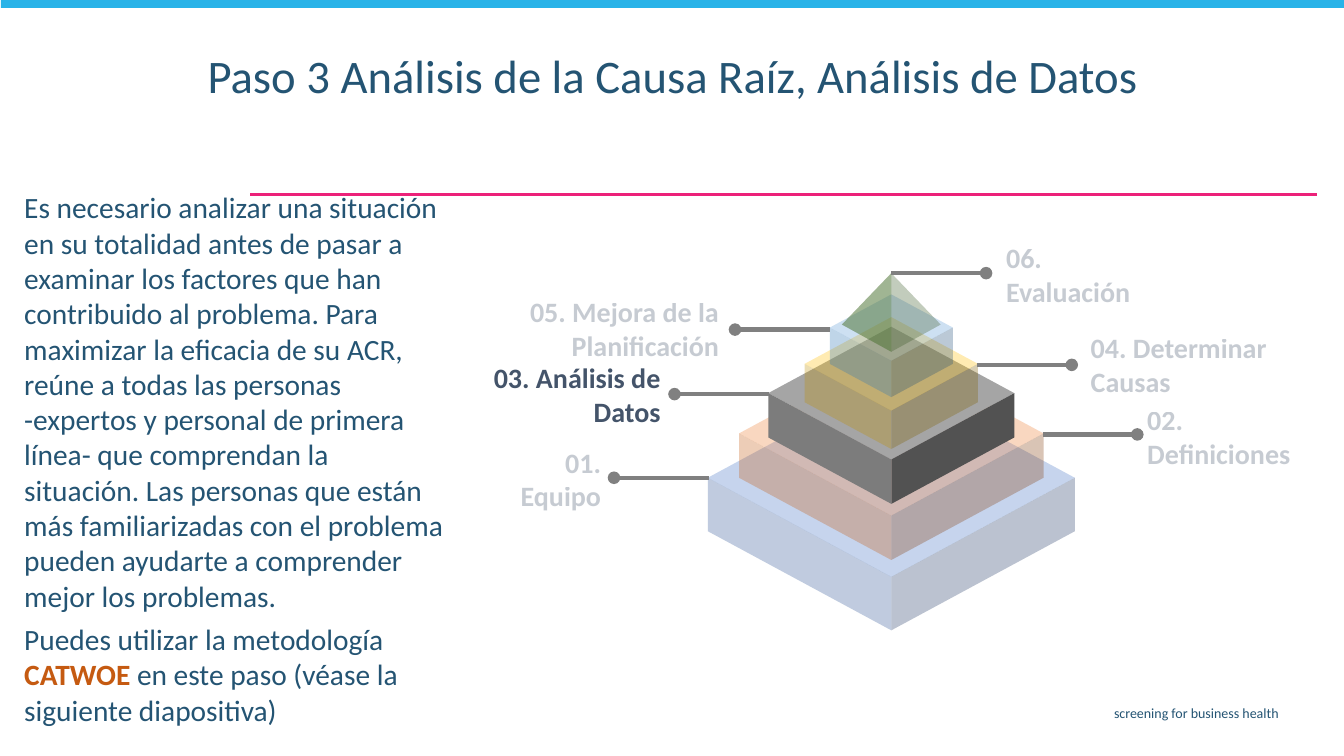
from lxml.etree import SubElement
from pptx import Presentation
from pptx.dml.color import RGBColor
from pptx.enum.shapes import MSO_CONNECTOR as CONNECTOR, MSO_SHAPE as SHAPE
from pptx.enum.text import MSO_ANCHOR as ANCHOR, PP_ALIGN as ALIGN
from pptx.oxml.ns import qn
from pptx.util import Inches, Pt

NAVY = RGBColor(0x24, 0x54, 0x73)
SKY = RGBColor(0x29, 0xB3, 0xE8)
PINK = RGBColor(0xEC, 0x21, 0x79)
GREY = RGBColor(0x80, 0x80, 0x80)
SLATE = RGBColor(0x44, 0x54, 0x6A)
RUST = RGBColor(0xC5, 0x5A, 0x11)
BLUES = RGBColor(0x44, 0x72, 0xC4), RGBColor(0x20, 0x38, 0x64), RGBColor(0x2F, 0x55, 0x97)
ORANGES = RGBColor(0xED, 0x7D, 0x31), RGBColor(0x84, 0x3C, 0x0B), RUST
GREYS = RGBColor(0xA5, 0xA5, 0xA5), RGBColor(0x52, 0x52, 0x52), RGBColor(0x7C, 0x7C, 0x7C)
GOLDS = RGBColor(0xFF, 0xC0, 0x00), RGBColor(0x80, 0x60, 0x00), RGBColor(0xBF, 0x90, 0x00)
LIGHT_BLUES = RGBColor(0x5B, 0x9B, 0xD5), RGBColor(0x1F, 0x4E, 0x79), RGBColor(0x2E, 0x75, 0xB6)
DARK_GREEN = RGBColor(0x38, 0x57, 0x23)
GREEN = RGBColor(0x54, 0x82, 0x35)

FADED = 30
AXIS = 8.84
SLOPE = 0.54
LEADER = 0.94

TITLE = "Paso 3 Análisis de la Causa Raíz, Análisis de Datos"
BODY = [
    [("Es necesario analizar una situación en su totalidad antes de pasar a examinar los "
      "factores que han contribuido al problema. Para maximizar la eficacia de su ACR, reúne "
      "a todas las personas -expertos y personal de primera línea- que comprendan la "
      "situación. Las personas que están más familiarizadas con el problema pueden ayudarte "
      "a comprender mejor los problemas.", NAVY, False)],
    [("Puedes utilizar la metodología ", NAVY, False), ("CATWOE", RUST, True),
     (" en este paso (véase la siguiente diapositiva)", NAVY, False)],
]
TIERS = [
    (1.82, 4.74, 0.53, BLUES, FADED),
    (1.51, 4.3, 0.44, ORANGES, FADED),
    (1.22, 3.9, 0.44, GREYS, 100),
    (0.86, 3.61, 0.38, GOLDS, FADED),
    (0.61, 3.25, 0.36, LIGHT_BLUES, FADED),
]
LEADERS = [(8.84, 2.71, 1), (9.69, 3.62, 1), (10.34, 4.31, 1),
           (7.03, 4.74, -1), (7.63, 3.91, -1), (8.23, 3.27, -1)]
STEPS = [
    (["06. Evaluación"], (9.88, 2.5, 1.79, 0.44), ALIGN.LEFT, FADED),
    (["04. Determinar", "Causas"], (10.72, 3.23, 2.1, 0.77), ALIGN.LEFT, FADED),
    (["02. Definiciones"], (11.28, 4.11, 1.97, 0.44), ALIGN.LEFT, FADED),
    (["01. Equipo"], (4.68, 4.53, 1.38, 0.44), ALIGN.RIGHT, FADED),
    (["03. Análisis de Datos"], (4.17, 3.69, 2.48, 0.44), ALIGN.RIGHT, 100),
    (["05. Mejora de la Planificación"], (3.77, 3.04, 3.46, 0.44), ALIGN.RIGHT, FADED),
]


def set_opacity(properties, percent):
    """Make the solid fill within the given properties partly transparent."""
    if percent < 100:
        colour = properties.find(qn("a:solidFill"))[0]
        SubElement(colour, qn("a:alpha")).set("val", str(percent * 1000))


def add_text(slide, paragraphs, box, size, align=ALIGN.LEFT, anchor=ANCHOR.TOP,
             margins=(0.1, 0.05), opacity=100, space_before=0, line_spacing=None):
    """Write paragraphs of (text, colour, bold) runs in a wrapped box."""
    frame = slide.shapes.add_textbox(*map(Inches, box)).text_frame
    frame.word_wrap = True
    frame.vertical_anchor = anchor
    frame.margin_left = frame.margin_right = Inches(margins[0])
    frame.margin_top = frame.margin_bottom = Inches(margins[1])
    for index, runs in enumerate(paragraphs):
        paragraph = frame.add_paragraph() if index else frame.paragraphs[0]
        paragraph.alignment = align
        paragraph.line_spacing = line_spacing
        if index:
            paragraph.space_before = Pt(space_before)
        for text, colour, bold in runs:
            run = paragraph.add_run()
            run.text = text
            run.font.name = "Calibri"
            run.font.size = Pt(size)
            run.font.bold = bold
            run.font.color.rgb = colour
            set_opacity(run.font._element, opacity)


def paint(shape, colour, opacity=100):
    """Give a shape a plain fill without outline or shadow."""
    shape.shadow.inherit = False
    shape.fill.solid()
    shape.fill.fore_color.rgb = colour
    shape.line.fill.background()
    set_opacity(shape._element.spPr, opacity)


def add_face(slide, points, colour, opacity):
    """Draw one closed face of the pyramid."""
    start, *corners = [(Inches(x), Inches(y)) for x, y in points]
    outline = slide.shapes.build_freeform(*start)
    outline.add_line_segments(corners, close=True)
    paint(outline.convert_to_shape(), colour, opacity)


def add_tier(slide, half_width, shoulder, depth, colours, opacity):
    """Draw the top, right and left faces of one pyramid tier."""
    top_colour, *side_colours = colours
    rise = half_width * SLOPE
    front = shoulder + rise
    add_face(slide, [(AXIS, shoulder - rise), (AXIS + half_width, shoulder),
                     (AXIS, front), (AXIS - half_width, shoulder)], top_colour, opacity)
    for side, colour in zip((1, -1), side_colours):
        corner = AXIS + side * half_width
        add_face(slide, [(AXIS, front + depth), (corner, shoulder + depth),
                         (corner, shoulder), (AXIS, front)], colour, opacity)


def add_peak(slide):
    """Draw the pointed top of the pyramid."""
    tip, right, front, left = (AXIS, 2.71), (9.33, 3.22), (AXIS, 3.49), (8.35, 3.22)
    add_face(slide, [tip, right, front, left], DARK_GREEN, FADED)
    add_face(slide, [tip, front, left], GREEN, FADED)


def add_line(slide, start, end, colour, width, dot=False):
    """Draw a straight line, with a dot at its end if asked."""
    line = slide.shapes.add_connector(CONNECTOR.STRAIGHT, *map(Inches, start + end))
    line.line.color.rgb = colour
    line.line.width = Pt(width)
    if dot:
        SubElement(line.line._get_or_add_ln(), qn("a:tailEnd")).set("type", "oval")
    SubElement(line._element.spPr, qn("a:effectLst"))


def main():
    """Build the slide and save it."""
    deck = Presentation()
    deck.slide_width, deck.slide_height = Inches(13.33), Inches(7.5)
    slide = deck.slides.add_slide(deck.slide_layouts[6])

    add_line(slide, (13.06, 1.93), (2.48, 1.93), PINK, 1.5)
    top_band = slide.shapes.add_shape(
        SHAPE.RECTANGLE, *map(Inches, (0.01, -0.02, 13.34, 0.1)))
    paint(top_band, SKY)
    add_text(slide, [[("screening for business health", NAVY, False)]],
             (3.65, 6.94, 9.13, 0.29), 10, align=ALIGN.RIGHT)
    add_text(slide, [[(TITLE, NAVY, False)]], (1.96, 0.48, 9.68, 0.76), 33.3,
             line_spacing=0.9)
    add_text(slide, BODY, (0.15, 1.84, 4.35, 5.91), 21, margins=(0.09, 0.04),
             space_before=6)

    for tier in TIERS:
        add_tier(slide, *tier)
    add_peak(slide)
    for x, y, side in LEADERS:
        add_line(slide, (x, y), (x + side * LEADER, y), GREY, 3, dot=True)
    for lines, box, align, opacity in STEPS:
        add_text(slide, [[(line, SLATE, True)] for line in lines], box, 20,
                 align=align, anchor=ANCHOR.MIDDLE, opacity=opacity)

    deck.save("out.pptx")


if __name__ == "__main__":
    main()
